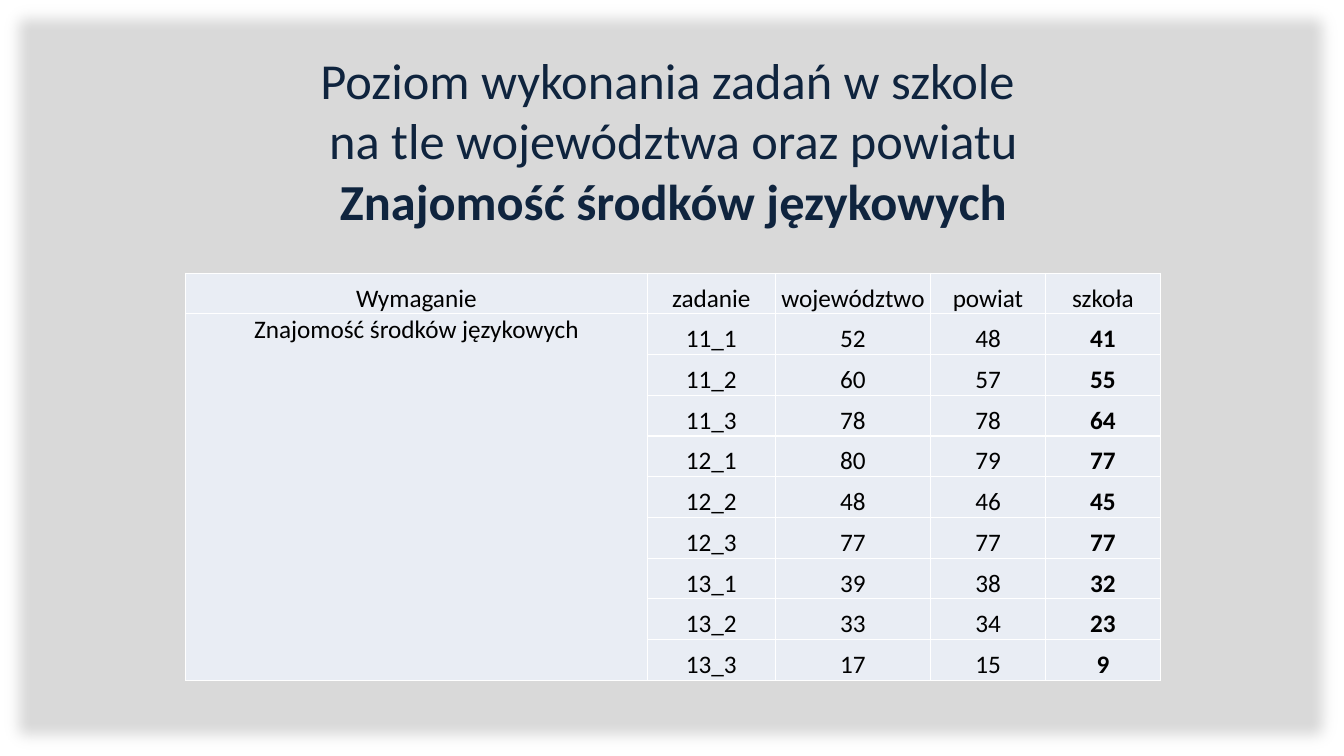
from dataclasses import dataclass

from lxml.etree import SubElement
from pptx import Presentation
from pptx.dml.color import RGBColor
from pptx.enum.shapes import MSO_SHAPE
from pptx.enum.text import MSO_ANCHOR, MSO_AUTO_SIZE, PP_ALIGN
from pptx.oxml.ns import qn
from pptx.util import Inches, Pt

# Content
TITLE_LINES = [
    ("Poziom wykonania zadań w szkole ", False),
    ("na tle województwa oraz powiatu", False),
    ("Znajomość środków językowych", True),
]
HEADER = ["Wymaganie", "zadanie", "województwo", "powiat", "szkoła"]
REQUIREMENT = "Znajomość środków językowych"
RESULTS = [
    ("11_1", 52, 48, 41),
    ("11_2", 60, 57, 55),
    ("11_3", 78, 78, 64),
    ("12_1", 80, 79, 77),
    ("12_2", 48, 46, 45),
    ("12_3", 77, 77, 77),
    ("13_1", 39, 38, 32),
    ("13_2", 33, 34, 23),
    ("13_3", 17, 15, 9),
]

# Layout in inches
SLIDE_SIZE = (13.33, 7.5)
TITLE_BOX = (2.18, 0.76, 9, 1.25)
TABLE_BOX = (1.84, 2.71, 9.67, 4.04)
COLUMN_WIDTHS = [4.58, 1.27, 1.54, 1.14, 1.14]
CELL_INSET = 0.01


@dataclass(frozen=True)
class Theme:
    font: str = "Calibri"
    title_size: int = 36
    cell_size: int = 18
    backdrop: str = "D9D9D9"
    title: str = "0F243E"
    text: str = "000000"
    cell: str = "E9EDF4"
    border: str = "FFFFFF"
    border_width: float = 1
    soft_edge: float = 12.5


THEME = Theme()


def add_span(para, text, size, color, bold=False):
    span = para.add_run()
    span.text = text
    span.font.name = THEME.font
    span.font.size = Pt(size)
    span.font.bold = bold
    span.font.color.rgb = RGBColor.from_string(color)


def add_backdrop(deck, page):
    backdrop = page.shapes.add_shape(
        MSO_SHAPE.RECTANGLE, 0, 0, deck.slide_width, deck.slide_height)
    backdrop.shadow.inherit = False
    backdrop.fill.solid()
    backdrop.fill.fore_color.rgb = RGBColor.from_string(THEME.backdrop)
    backdrop.line.fill.background()
    effects = backdrop.element.spPr.find(qn("a:effectLst"))
    SubElement(effects, qn("a:softEdge"), rad=str(Pt(THEME.soft_edge)))
    # Keep the backdrop behind the title
    page.shapes.title.element.addprevious(backdrop.element)


def fill_title(title):
    title.left, title.top, title.width, title.height = map(Inches, TITLE_BOX)
    frame = title.text_frame
    frame.word_wrap = True
    frame.auto_size = MSO_AUTO_SIZE.NONE
    frame.vertical_anchor = MSO_ANCHOR.MIDDLE
    para = frame.paragraphs[0]
    para.alignment = PP_ALIGN.CENTER
    for index, (text, bold) in enumerate(TITLE_LINES):
        if index:
            para.add_line_break()
        add_span(para, text, THEME.title_size, THEME.title, bold)


def style_cell(cell):
    cell.margin_left = cell.margin_right = cell.margin_top = Inches(CELL_INSET)
    cell.margin_bottom = 0
    cell.vertical_anchor = MSO_ANCHOR.BOTTOM
    properties = cell._tc.get_or_add_tcPr()
    for side in ("a:lnL", "a:lnR", "a:lnT", "a:lnB"):
        line = SubElement(properties, qn(side), w=str(Pt(THEME.border_width)))
        paint = SubElement(line, qn("a:solidFill"))
        SubElement(paint, qn("a:srgbClr"), val=THEME.border)
    cell.fill.solid()
    cell.fill.fore_color.rgb = RGBColor.from_string(THEME.cell)


def add_results(page):
    rows = [HEADER] + [("", *result) for result in RESULTS]
    rows[1] = (REQUIREMENT, *RESULTS[0])
    table = page.shapes.add_table(
        len(rows), len(HEADER), *map(Inches, TABLE_BOX)).table
    table.first_row = table.horz_banding = False
    for column, width in zip(table.columns, COLUMN_WIDTHS):
        column.width = Inches(width)
    for r, values in enumerate(rows):
        table.rows[r].height = Inches(TABLE_BOX[3] / len(rows))
        for c, value in enumerate(values):
            cell = table.cell(r, c)
            style_cell(cell)
            if value == "":
                continue
            para = cell.text_frame.paragraphs[0]
            para.alignment = PP_ALIGN.CENTER
            school_result = r > 0 and c == len(HEADER) - 1
            add_span(para, str(value), THEME.cell_size, THEME.text, school_result)
    # One requirement covers every task
    requirement = table.cell(1, 0)
    requirement.merge(table.cell(len(RESULTS), 0))
    requirement.vertical_anchor = MSO_ANCHOR.TOP


def main():
    deck = Presentation()
    deck.slide_width, deck.slide_height = map(Inches, SLIDE_SIZE)
    page = deck.slides.add_slide(deck.slide_layouts.get_by_name("Title Only"))
    add_backdrop(deck, page)
    fill_title(page.shapes.title)
    add_results(page)
    deck.save("out.pptx")


if __name__ == "__main__":
    main()
